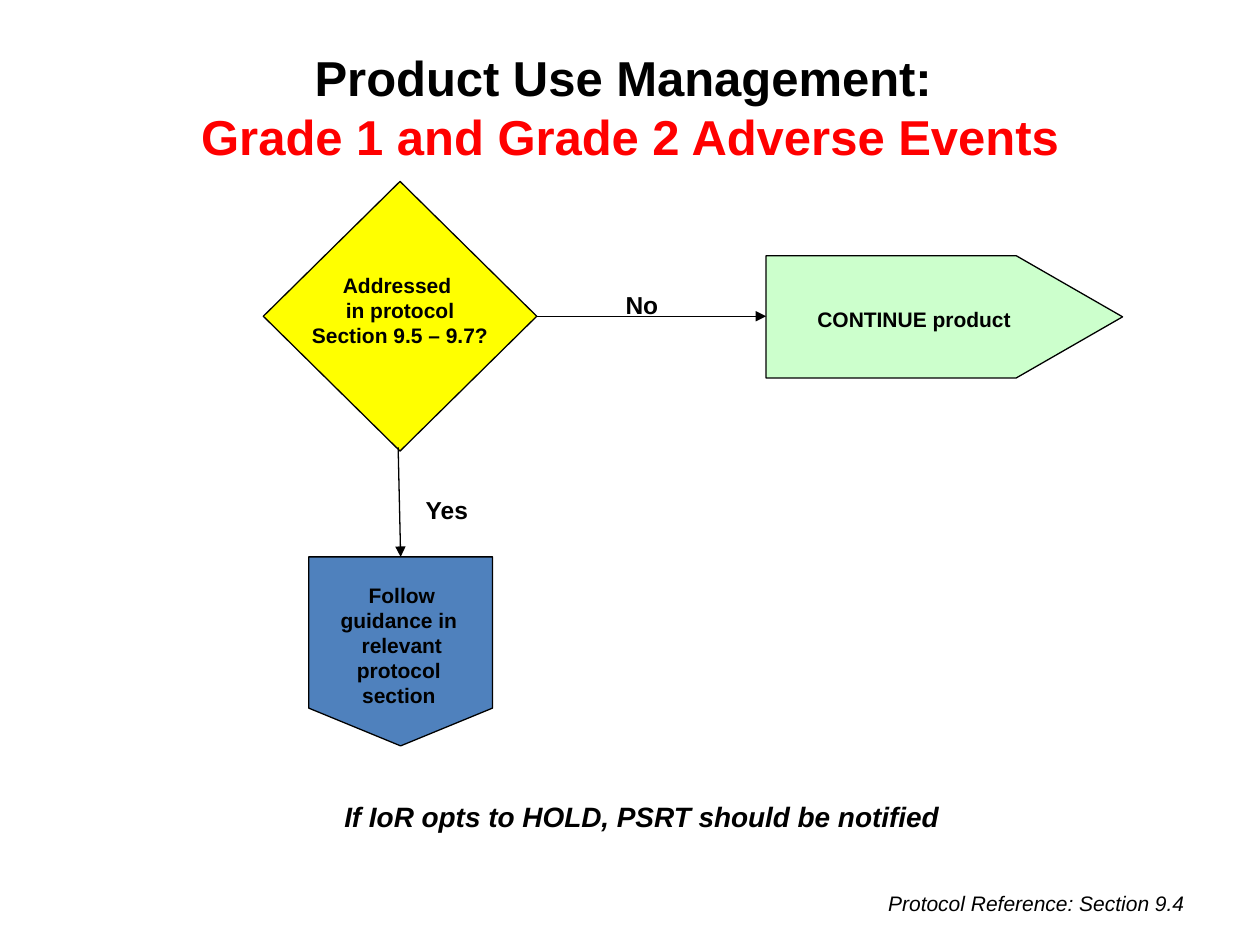
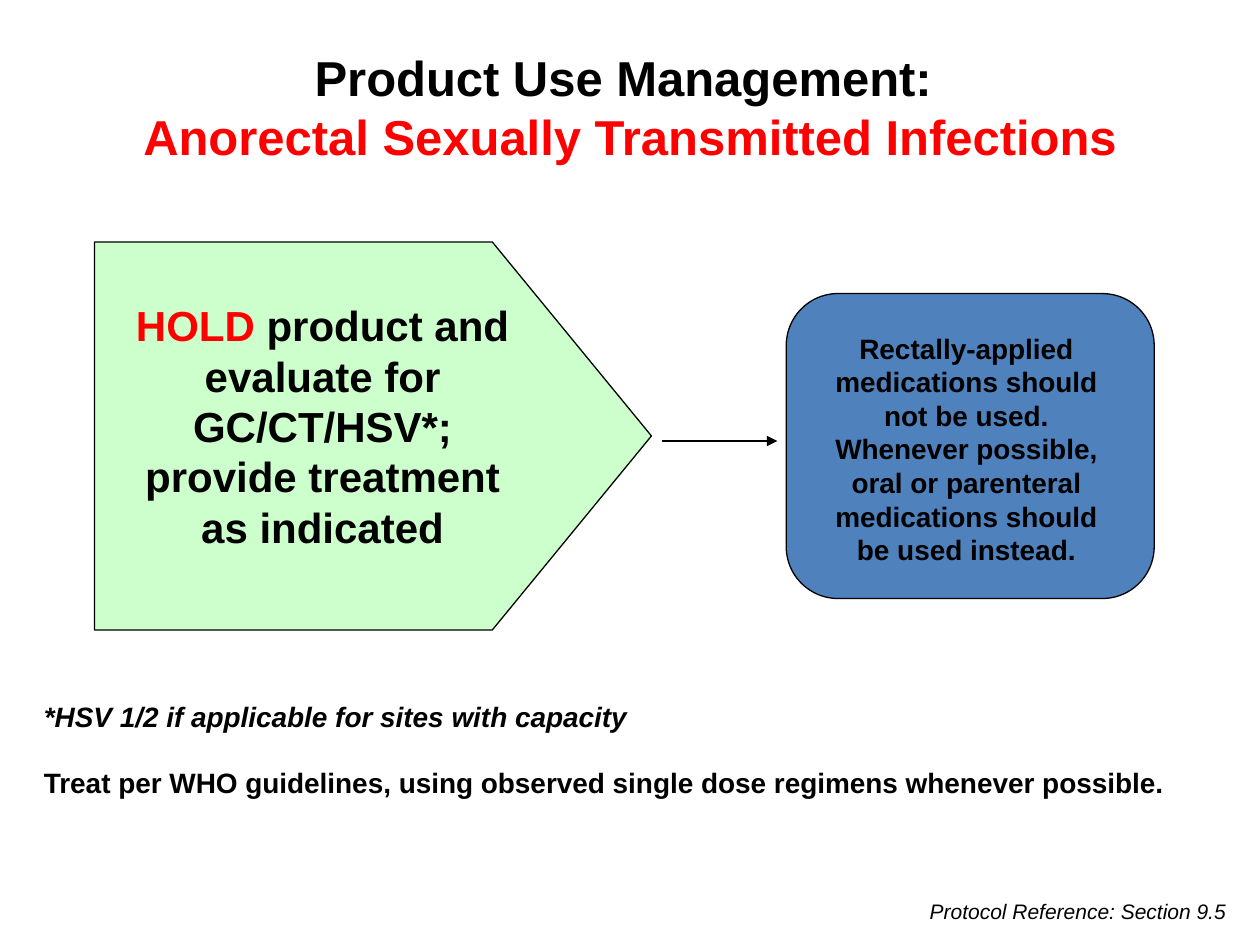
"""Builds two flow slides on product use management."""
from lxml import etree
from pptx import Presentation
from pptx import util as u
from pptx.dml.color import RGBColor
from pptx.enum import shapes, text
from pptx.oxml.ns import qn

COLORS = {"ink": "000000", "alert": "FF0000", "question": "FFFF00",
          "action": "CCFFCC", "guidance": "4F81BD"}
KINDS = {"diamond": shapes.MSO_SHAPE.DIAMOND,
         "pentagon": shapes.MSO_SHAPE.PENTAGON,
         "offpage": shapes.MSO_SHAPE.FLOWCHART_OFFPAGE_CONNECTOR,
         "rounded": shapes.MSO_SHAPE.ROUNDED_RECTANGLE}
ALIGN = {"left": text.PP_ALIGN.LEFT, "center": text.PP_ALIGN.CENTER,
         "right": text.PP_ALIGN.RIGHT}
STYLES = {
    "title": {"size": 28, "bold": True},
    "headline": {"size": 24, "bold": True},
    "note": {"size": 16, "bold": True},
    "branch": {"size": 14, "bold": True},
    "step": {"size": 12, "bold": True},
    "reference": {"size": 12, "italic": True},
}
GRID = (10, 7.5)
TITLE_BOX = (0.5, 0.33, 9, 1.04)
REFERENCE_SIZE = (3.75, 0.3)
LINE_WIDTH = 0.75

SLIDES = [
    {
        "topic": "Grade 1 and Grade 2 Adverse Events",
        "section": "9.4", "reference_at": (5.75, 7.02),
        "nodes": [
            ("diamond", "question", (2.09, 1.44, 2.17, 2.14), None),
            ("pentagon", "action", (6.08, 2.03, 2.83, 0.97), 0.87),
            ("offpage", "guidance", (2.45, 4.42, 1.46, 1.5), None),
        ],
        "arrows": [(4.26, 2.51, 6.08, 2.51), (3.16, 3.55, 3.18, 4.42)],
        "captions": [
            ("branch", "center", (4.61, 2.25, 0.97, 0.34), ["No"]),
            ("branch", "left", (3.28, 3.88, 0.58, 0.34), ["Yes"]),
            ("step", "center", (6, 2.38, 2.51, 0.3), ["CONTINUE product"]),
            ("step", "center", (2.29, 2.11, 1.77, 0.71),
             ["Addressed ", "in protocol", "Section 9.5 – 9.7?"]),
            ("step", "center", (2.46, 4.57, 1.46, 1.11),
             ["Follow guidance in ", "relevant protocol ", "section "]),
            ("note", "center", (0.26, 6.3, 9.67, 0.37),
             [[("If IoR opts to HOLD, PSRT should be notified",
                {"italic": True})]]),
        ],
    },
    {
        "topic": "Anorectal Sexually Transmitted Infections",
        "section": "9.5", "reference_at": (6.08, 7.08),
        "nodes": [
            ("pentagon", "action", (0.75, 1.92, 4.42, 3.08), 0.41),
            ("rounded", "guidance", (6.24, 2.33, 2.92, 2.42), 0.17),
        ],
        "arrows": [(5.25, 3.5, 6.17, 3.5)],
        "captions": [
            ("headline", "center", (0.85, 2.33, 3.42, 2.12),
             [[("HOLD", {"color": "alert"}),
               (" product and evaluate for GC/CT/HSV*; "
                "provide treatment as indicated", {})]]),
            ("note", "center", (6.42, 2.58, 2.5, 1.99),
             ["Rectally-applied medications should not be used. Whenever "
              "possible, oral or parenteral medications should be used "
              "instead."]),
            ("note", "left", (0.25, 5.5, 9.67, 0.37),
             [[("*HSV 1/2 if applicable for sites with capacity",
                {"italic": True})]]),
            ("note", "left", (0.25, 6.03, 9.67, 0.37),
             ["Treat per WHO guidelines, using observed single dose regimens "
              "whenever possible."]),
        ],
    },
]


def inches(lengths):
    return [u.Inches(length) for length in lengths]


def rgb(name):
    return RGBColor.from_string(COLORS[name])


def set_line(line):
    line.color.rgb = rgb("ink")
    line.width = u.Pt(LINE_WIDTH)


def add_node(slide, kind, color, box, adjustment):
    node = slide.shapes.add_shape(KINDS[kind], *inches(box))
    node.shadow.inherit = False
    node.fill.solid()
    node.fill.fore_color.rgb = rgb(color)
    set_line(node.line)
    if adjustment:
        node.adjustments[0] = adjustment


def add_arrow(slide, ends):
    arrow = slide.shapes.add_connector(shapes.MSO_CONNECTOR.STRAIGHT,
                                       *inches(ends))
    set_line(arrow.line)
    etree.SubElement(arrow.line._get_or_add_ln(), qn("a:tailEnd"),
                     type="triangle")
    etree.SubElement(arrow._element.spPr, qn("a:effectLst"))


def add_caption(slide, style, align, box, paragraphs):
    frame = slide.shapes.add_textbox(*inches(box)).text_frame
    frame.word_wrap = True
    for row, runs in enumerate(paragraphs):
        paragraph = frame.paragraphs[0] if row == 0 else frame.add_paragraph()
        paragraph.alignment = ALIGN[align]
        for words, changes in [(runs, {})] if isinstance(runs, str) else runs:
            run = paragraph.add_run()
            run.text = words
            look = {"name": "Arial", "color": "ink", **STYLES[style], **changes}
            run.font.color.rgb = rgb(look.pop("color"))
            look["size"] = u.Pt(look["size"])
            for attribute, value in look.items():
                setattr(run.font, attribute, value)


def main():
    deck = Presentation()
    deck.slide_width, deck.slide_height = inches(GRID)
    for content in SLIDES:
        slide = deck.slides.add_slide(deck.slide_layouts[6])
        for node in content["nodes"]:
            add_node(slide, *node)
        for ends in content["arrows"]:
            add_arrow(slide, ends)
        add_caption(slide, "title", "center", TITLE_BOX,
                    ["Product Use Management: ",
                     [(content["topic"], {"color": "alert"})]])
        for caption in content["captions"]:
            add_caption(slide, *caption)
        add_caption(slide, "reference", "right",
                    content["reference_at"] + REFERENCE_SIZE,
                    [f"Protocol Reference: Section {content['section']}"])
    deck.save("out.pptx")


if __name__ == "__main__":
    main()
